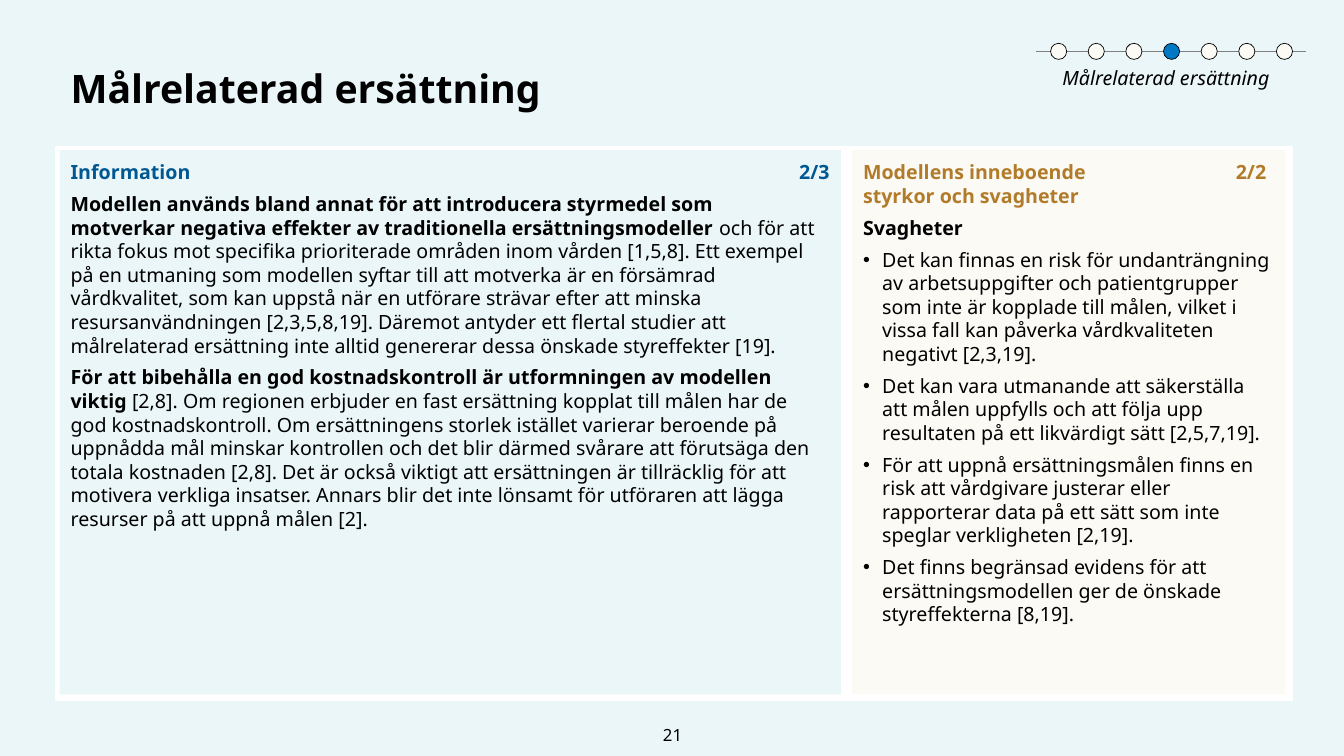
from lxml import etree
from pptx import Presentation
from pptx.dml.color import RGBColor
from pptx.enum.shapes import MSO_CONNECTOR, MSO_SHAPE
from pptx.enum.text import MSO_ANCHOR, MSO_AUTO_SIZE, PP_ALIGN
from pptx.oxml.ns import qn
from pptx.util import Inches, Pt

RECTANGLE, OVAL = MSO_SHAPE.RECTANGLE, MSO_SHAPE.OVAL
STRAIGHT = MSO_CONNECTOR.STRAIGHT
TOP, MIDDLE, BOTTOM = MSO_ANCHOR.TOP, MSO_ANCHOR.MIDDLE, MSO_ANCHOR.BOTTOM
LEFT, CENTER, RIGHT = PP_ALIGN.LEFT, PP_ALIGN.CENTER, PP_ALIGN.RIGHT
NO_AUTOSIZE = MSO_AUTO_SIZE.NONE

BLACK, WHITE, GREY = "000000", "FFFFFF", "808080"
PALE_BLUE, CREAM = "EBF6F9", "FCFAF5"
DARK_BLUE, BLUE, OCHRE = "005892", "0078C4", "B27B2A"

TOPIC = "Målrelaterad ersättning"
INFORMATION = [
    ("Modellen används bland annat för att introducera styrmedel som motverkar negativa effekter av "
     "traditionella ersättningsmodeller ",
     "och för att rikta fokus mot specifika prioriterade områden inom vården [1,5,8]. Ett exempel på en "
     "utmaning som modellen syftar till att motverka är en försämrad vårdkvalitet, som kan uppstå när en "
     "utförare strävar efter att minska resursanvändningen [2,3,5,8,19]. Däremot antyder ett flertal studier "
     "att målrelaterad ersättning inte alltid genererar dessa önskade styreffekter [19]."),
    ("För att bibehålla en god kostnadskontroll är utformningen av modellen viktig",
     " [2,8]. Om regionen erbjuder en fast ersättning kopplat till målen har de god kostnadskontroll. Om "
     "ersättningens storlek istället varierar beroende på uppnådda mål minskar kontrollen och det blir därmed "
     "svårare att förutsäga den totala kostnaden [2,8]. Det är också viktigt att ersättningen är tillräcklig "
     "för att motivera verkliga insatser. Annars blir det inte lönsamt för utföraren att lägga resurser på "
     "att uppnå målen [2]."),
]
WEAKNESSES = [
    "Det kan finnas en risk för undanträngning av arbetsuppgifter och patientgrupper som inte är kopplade "
    "till målen, vilket i vissa fall kan påverka vårdkvaliteten negativt [2,3,19].",
    "Det kan vara utmanande att säkerställa att målen uppfylls och att följa upp resultaten på ett likvärdigt "
    "sätt [2,5,7,19].",
    "För att uppnå ersättningsmålen finns en risk att vårdgivare justerar eller rapporterar data på ett sätt "
    "som inte speglar verkligheten [2,19].",
    "Det finns begränsad evidens för att ersättningsmodellen ger de önskade styreffekterna [8,19].",
]
STEPS, CURRENT_STEP = 7, 3


def color(hex_string):
    return RGBColor.from_string(hex_string)


def add_text(paragraph, text, size=14, hex_color=BLACK, bold=False, italic=False, font="Noto Sans"):
    for index, line in enumerate(text.split("\v")):
        if index:
            paragraph.add_line_break()
        run = paragraph.add_run()
        run.text = line
        run.font.name, run.font.size = font, Pt(size)
        run.font.bold, run.font.italic = bold, italic
        run.font.color.rgb = color(hex_color)


class SlideBuilder:
    title_spacing = 1.1
    body_spacing = 1.0

    def __init__(self, slide):
        self.slide = slide
        slide.background.fill.solid()
        slide.background.fill.fore_color.rgb = color(PALE_BLUE)

    def frame(self, shape, insets, anchor):
        text_frame = shape.text_frame
        text_frame.word_wrap = True
        text_frame.auto_size = NO_AUTOSIZE
        text_frame.vertical_anchor = anchor
        (text_frame.margin_left, text_frame.margin_top,
         text_frame.margin_right, text_frame.margin_bottom) = map(Inches, insets)
        return text_frame

    def title(self, text, left, top, width, height):
        title = self.slide.shapes.title
        title.left, title.top, title.width, title.height = map(Inches, (left, top, width, height))
        paragraph = self.frame(title, (0, 0, 0.1, 0.05), TOP).paragraphs[0]
        paragraph.alignment, paragraph.line_spacing = LEFT, self.title_spacing
        add_text(paragraph, text, size=28, bold=True)

    def shape(self, kind, left, top, width, height, fill, line=None, line_width=1):
        shape = self.slide.shapes.add_shape(kind, *map(Inches, (left, top, width, height)))
        shape.shadow.inherit = False
        shape.fill.solid()
        shape.fill.fore_color.rgb = color(fill)
        if line:
            shape.line.color.rgb = color(line)
            shape.line.width = Pt(line_width)
        else:
            shape.line.fill.background()

    def line(self, left, right, y, hex_color):
        connector = self.slide.shapes.add_connector(STRAIGHT, Inches(left), Inches(y), Inches(right), Inches(y))
        connector.line.color.rgb = color(hex_color)
        connector.line.width = Pt(1)
        etree.SubElement(connector._element.spPr, qn("a:effectLst"))

    def text_box(self, left, top, width, height, insets=(0, 0, 0.1, 0.05), anchor=TOP):
        box = self.slide.shapes.add_textbox(*map(Inches, (left, top, width, height)))
        return self.frame(box, insets, anchor)

    def label(self, text, left, top, width, height, insets, anchor=TOP, align=CENTER, **text_format):
        paragraph = self.text_box(left, top, width, height, insets, anchor).paragraphs[0]
        paragraph.alignment, paragraph.line_spacing = align, self.body_spacing
        add_text(paragraph, text, **text_format)

    def paragraph(self, text_frame, first=False, bullet=False):
        paragraph = text_frame.paragraphs[0] if first else text_frame.add_paragraph()
        paragraph.line_spacing, paragraph.space_after = self.body_spacing, Pt(6)
        if bullet:
            properties = paragraph._p.get_or_add_pPr()
            properties.set("marL", str(Inches(0.19)))
            properties.set("indent", str(Inches(-0.19)))
            etree.SubElement(properties, qn("a:buFont")).set("typeface", "Arial")
            etree.SubElement(properties, qn("a:buChar")).set("char", "•")
        return paragraph

    def page_mark(self, text, left, hex_color):
        self.label(text, left, 1.59, 0.97, 0.23, (0, 0.05, 0, 0), BOTTOM, RIGHT, hex_color=hex_color, bold=True)

    def progress(self, steps, current):
        self.line(10.28, 12.95, 0.51, GREY)
        for step in range(steps):
            fill = BLUE if step == current else CREAM
            self.shape(OVAL, 10.42 + step * 2.24 / (steps - 1), 0.43, 0.16, 0.16, fill, BLACK, 0.5)


def main():
    presentation = Presentation()
    presentation.slide_width, presentation.slide_height = Inches(13.33), Inches(7.5)
    builder = SlideBuilder(presentation.slides.add_slide(presentation.slide_layouts[5]))

    builder.shape(RECTANGLE, 0.55, 1.46, 12.27, 5.49, WHITE, WHITE)
    builder.shape(RECTANGLE, 0.59, 1.49, 7.75, 5.4, PALE_BLUE)
    builder.shape(RECTANGLE, 8.45, 1.49, 4.3, 5.4, CREAM)
    builder.title(TOPIC, 0.7, 0.59, 11.94, 0.8)
    builder.label("21", 6.16, 7.09, 1.02, 0.4, (0.1, 0.05, 0.1, 0.05), MIDDLE, size=12)
    builder.label(TOPIC, 10.38, 0.61, 2.47, 0.16, (0, 0.05, 0.1, 0.05), italic=True)

    information = builder.text_box(0.7, 1.59, 7.52, 4.88)
    add_text(builder.paragraph(information, first=True), "Information", hex_color=DARK_BLUE, bold=True)
    for claim, explanation in INFORMATION:
        paragraph = builder.paragraph(information)
        add_text(paragraph, claim, bold=True)
        add_text(paragraph, explanation)
    builder.page_mark("2/3", 7.26, DARK_BLUE)

    weaknesses = builder.text_box(8.56, 1.59, 4.15, 5.2)
    add_text(builder.paragraph(weaknesses, first=True), "Modellens inneboende \vstyrkor och svagheter",
             hex_color=OCHRE, bold=True)
    add_text(builder.paragraph(weaknesses), "Svagheter", bold=True)
    for weakness in WEAKNESSES:
        add_text(builder.paragraph(weaknesses, bullet=True), weakness)
    builder.page_mark("2/2", 11.59, OCHRE)

    builder.progress(STEPS, CURRENT_STEP)
    presentation.save("out.pptx")


if __name__ == "__main__":
    main()
